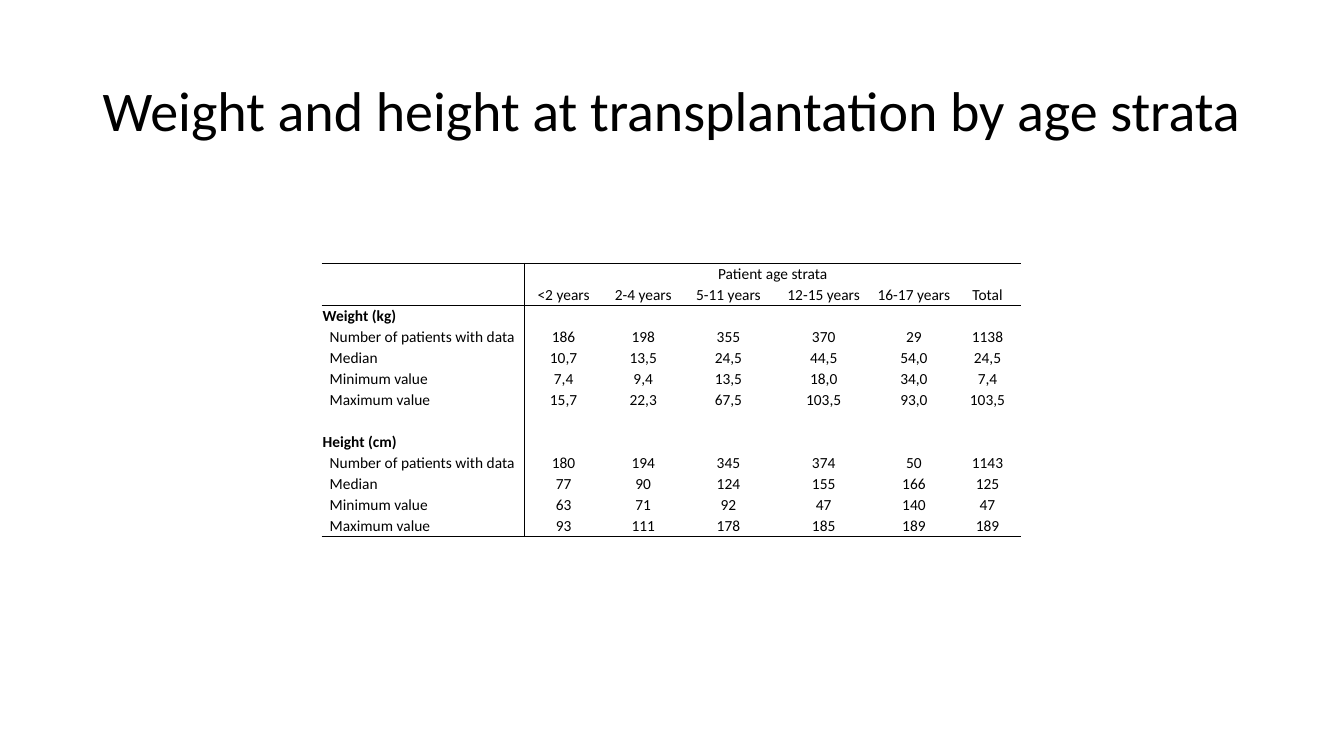
from lxml.etree import SubElement
from pptx import Presentation
from pptx.dml.color import RGBColor
from pptx.enum.text import MSO_ANCHOR as Anchor, PP_ALIGN as Align
from pptx.oxml.ns import qn
from pptx.util import Inches, Pt

COLORS = {"text": "000000", "rule": "000000"}
FONT = "Calibri"
TABLE_SIZE = Pt(11)
COLUMN_WIDTHS = [2.01, 0.78, 0.8, 0.89, 1, 0.79, 0.67]
MEASURES = ["Number of patients with data", "Median", "Minimum value", "Maximum value"]
AGE_STRATA = ["<2 years", "2-4 years", "5-11 years", "12-15 years", "16-17 years", "Total"]
WEIGHT = [
    ["186", "198", "355", "370", "29", "1138"],
    ["10,7", "13,5", "24,5", "44,5", "54,0", "24,5"],
    ["7,4", "9,4", "13,5", "18,0", "34,0", "7,4"],
    ["15,7", "22,3", "67,5", "103,5", "93,0", "103,5"],
]
HEIGHT = [
    ["180", "194", "345", "374", "50", "1143"],
    ["77", "90", "124", "155", "166", "125"],
    ["63", "71", "92", "47", "140", "47"],
    ["93", "111", "178", "185", "189", "189"],
]


def section_rows(heading, values):
    """A heading row followed by one row per measure."""
    return [[heading] + [""] * len(AGE_STRATA)] + [
        [measure] + row for measure, row in zip(MEASURES, values)]


def format_text(paragraph, size, bold=False):
    for run in paragraph.runs:
        run.font.name = FONT
        run.font.size = size
        run.font.bold = bold
        run.font.color.rgb = RGBColor.from_string(COLORS["text"])


def add_title(slide, text):
    title = slide.shapes.add_textbox(Inches(0.92), Inches(0.4), Inches(11.5), Inches(1.45))
    frame = title.text_frame
    frame.word_wrap = True
    frame.vertical_anchor = Anchor.MIDDLE
    frame.text = text
    frame.paragraphs[0].line_spacing = 0.9
    format_text(frame.paragraphs[0], Pt(40))


def set_borders(cell, ruled_edges):
    """Draw a thin rule on the given edges and none on the others."""
    properties = cell._tc.get_or_add_tcPr()
    for edge in "LRTB":
        line = SubElement(properties, qn(f"a:ln{edge}"), w=str(Pt(0.5)))
        if edge in ruled_edges:
            fill = SubElement(line, qn("a:solidFill"))
            SubElement(fill, qn("a:srgbClr"), val=COLORS["rule"])
        else:
            SubElement(line, qn("a:noFill"))


def fill_cell(cell, text, is_label, is_heading):
    cell.text = text
    cell.vertical_anchor = Anchor.BOTTOM
    cell.margin_left = Inches(0.08 if is_label and not is_heading else 0.01)
    cell.margin_right = cell.margin_top = Inches(0.01)
    cell.margin_bottom = 0
    paragraph = cell.text_frame.paragraphs[0]
    paragraph.alignment = Align.LEFT if is_label else Align.CENTER
    format_text(paragraph, TABLE_SIZE, is_heading)
    if not text:
        # Keep empty rows as low as the filled ones
        SubElement(paragraph._p, qn("a:endParaRPr"), sz=str(int(TABLE_SIZE.pt * 100)))


def add_strata_table(slide, rows, headings):
    table = slide.shapes.add_table(
        len(rows), len(COLUMN_WIDTHS),
        Inches(3.19), Inches(2.61), Inches(sum(COLUMN_WIDTHS)), Inches(2.71)).table
    table.first_row = table.horz_banding = False
    for column, width in zip(table.columns, COLUMN_WIDTHS):
        column.width = Inches(width)

    # Rules frame the header, the last row and the label column
    row_edges = {0: "T", 1: "B", 2: "T", len(rows) - 1: "B"}
    column_edges = {0: "R", 1: "L"}
    for r, row in enumerate(rows):
        for c, text in enumerate(row):
            cell = table.cell(r, c)
            fill_cell(cell, text, c == 0, text in headings)
            set_borders(cell, row_edges.get(r, "") + column_edges.get(c, ""))
            cell.fill.background()
    table.cell(0, 1).merge(table.cell(0, len(AGE_STRATA)))


def main():
    deck = Presentation()
    deck.slide_width, deck.slide_height = Inches(13.33), Inches(7.5)
    slide = deck.slides.add_slide(deck.slide_layouts[6])

    add_title(slide, "Weight and height at transplantation by age strata")

    # Header, weight section, spacer row, height section
    blank = [""] * len(COLUMN_WIDTHS)
    headings = ["Weight (kg)", "Height (cm)"]
    header = [["", "Patient age strata"] + blank[2:], [""] + AGE_STRATA]
    rows = (header + section_rows(headings[0], WEIGHT)
            + [blank] + section_rows(headings[1], HEIGHT))
    add_strata_table(slide, rows, headings)

    deck.save("out.pptx")


if __name__ == "__main__":
    main()
